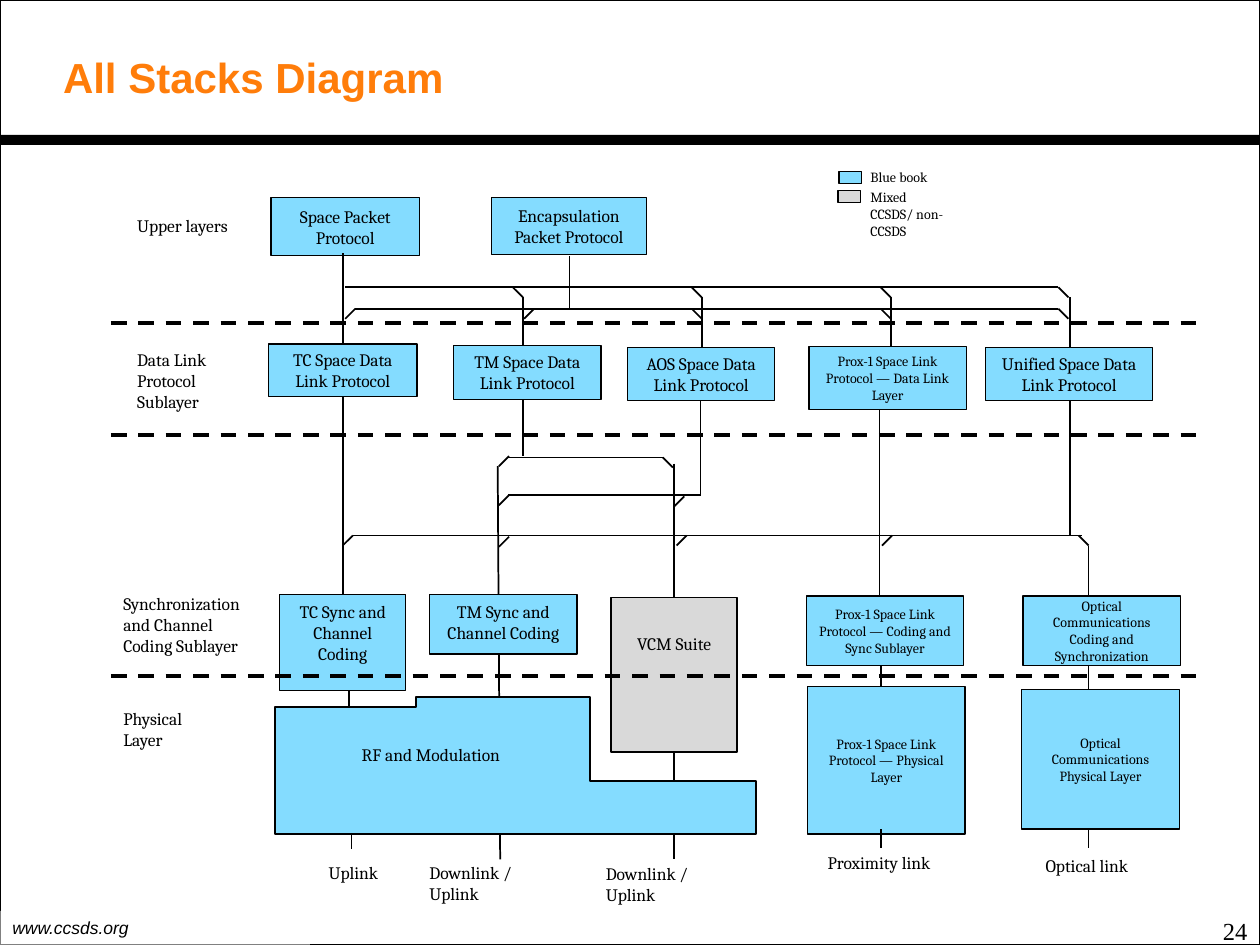
from dataclasses import dataclass
from typing import NamedTuple, Optional

from lxml.etree import SubElement
from pptx import Presentation
from pptx.dml.color import RGBColor
from pptx.enum.dml import MSO_LINE
from pptx.enum.shapes import MSO_CONNECTOR, MSO_SHAPE
from pptx.enum.text import MSO_ANCHOR as Anchor, MSO_AUTO_SIZE as AutoSize, PP_ALIGN as Align
from pptx.oxml.ns import qn
from pptx.util import Inches, Pt

BLACK = RGBColor(0x00, 0x00, 0x00)
WHITE = RGBColor(0xFF, 0xFF, 0xFF)
ORANGE = RGBColor(0xFF, 0x7D, 0x0A)
BLUE_BOOK = RGBColor(0x84, 0xDC, 0xFF)
MIXED = RGBColor(0xD9, 0xD9, 0xD9)

COLUMNS, ROWS = 1000, 750
WIDTH, HEIGHT = Inches(10), Inches(7.5)
TICK = 8


class Area(NamedTuple):
    col: float
    row: float
    cols: float
    rows: float


class Link(NamedTuple):
    col1: float
    row1: float
    col2: float
    row2: float


@dataclass
class Box:
    text: str
    area: Area
    size: float = 10
    fill: RGBColor = BLUE_BOOK
    anchor: Anchor = Anchor.MIDDLE
    lift: float = 0


@dataclass
class Label:
    text: str
    area: Area
    size: float = 10
    font: str = "Cambria"
    align: Align = Align.LEFT


BOXES = [
    Box("Space Packet Protocol", Area(215, 157, 118, 46)),
    Box("Encapsulation Packet Protocol", Area(390, 157, 123, 45)),
    Box("TC Space Data Link Protocol", Area(213, 273, 118, 42)),
    Box("TM Space Data Link Protocol", Area(360, 274, 117, 43)),
    Box("AOS Space Data Link Protocol", Area(498, 276, 117, 42)),
    Box("Prox-1 Space Link Protocol — Data Link Layer", Area(642, 275, 125, 50), 8),
    Box("Unified Space Data Link Protocol", Area(782, 276, 133, 42)),
    Box("TC Sync and Channel Coding", Area(222, 472, 100, 76), lift=16),
    Box("TM Sync and Channel Coding", Area(341, 472, 117, 47), anchor=Anchor.TOP),
    Box("VCM Suite", Area(485, 474, 100, 123), fill=MIXED, lift=49),
    Box("Prox-1 Space Link Protocol — Coding and Sync Sublayer", Area(640, 473, 125, 55), 8),
    Box("Optical Communications Coding and Synchronization", Area(812, 473, 125, 55), 8),
    Box("Prox-1 Space Link Protocol — Physical Layer", Area(641, 545, 125, 117), 8),
    Box("Optical Communications Physical Layer", Area(811, 547, 125, 111), 8),
    Box("", Area(666, 136, 18, 10)),
    Box("", Area(665, 151, 18, 10), fill=MIXED),
]
LABELS = [
    Label("Upper layers", Area(99, 166, 117, 27)),
    Label("Data Link Protocol Sublayer", Area(99, 272, 100, 61)),
    Label("Synchronization and Channel Coding Sublayer", Area(88, 466, 119, 61)),
    Label("Physical Layer", Area(88, 557, 92, 44)),
    Label("Blue book", Area(681, 129, 72, 24), 8),
    Label("Mixed CCSDS/ non-CCSDS", Area(681, 145, 80, 50), 8),
    Label("Uplink", Area(251, 679, 75, 27)),
    Label("Downlink / Uplink", Area(331, 679, 90, 44)),
    Label("Downlink / Uplink", Area(471, 680, 90, 44)),
    Label("Proximity link", Area(647, 671, 105, 27)),
    Label("Optical link", Area(820, 674, 100, 27)),
    Label("24", Area(767, 722, 233, 28), 14, "Times New Roman", Align.RIGHT),
]
RF_OUTLINE = [(218, 561), (330, 561), (330, 553), (468, 553), (468, 620),
              (600, 620), (600, 662), (218, 662)]

LINKS_BEHIND = [
    Link(395, 370, 397, 682), Link(535, 368, 535, 682),
    Link(864, 433, 864, 673), Link(415, 236, 415, 362),
]
BUSES = [
    Link(274, 228, 840, 228), Link(282, 245, 840, 245), Link(403, 363, 526, 363),
    Link(403, 393, 556, 393), Link(280, 425, 859, 425),
]
DROPS = [
    Link(272, 201, 272, 273), Link(452, 203, 452, 245), Link(557, 236, 557, 276),
    Link(707, 236, 707, 275), Link(849, 236, 849, 276), Link(272, 315, 272, 472),
    Link(556, 318, 556, 393), Link(698, 325, 698, 473), Link(849, 318, 849, 425),
    Link(699, 528, 699, 545), Link(277, 548, 277, 561), Link(279, 661, 279, 674),
    Link(699, 658, 699, 673),
]
FALLING_TICKS = [(407, 228), (549, 228), (699, 228), (840, 228), (549, 245),
                 (699, 245), (840, 245), (526, 363), (856, 425)]
RISING_TICKS = [(282, 245), (424, 245), (404, 362), (404, 393), (543, 394),
                (280, 425), (404, 426), (545, 425), (708, 425)]
LAYER_BORDERS = [Link(88, row, 956, row) for row in (256, 345, 536.5)]


def x(cols: float) -> int:
    return round(WIDTH * cols / COLUMNS)


def y(rows: float) -> int:
    return round(HEIGHT * rows / ROWS)


def place(area: Area) -> tuple:
    return x(area.col), y(area.row), x(area.cols), y(area.rows)


def write(frame, text: str, size: float, font: str = "Cambria",
          align: Align = Align.CENTER, color: RGBColor = BLACK):
    frame.word_wrap = True
    frame.auto_size = AutoSize.NONE
    paragraph = frame.paragraphs[0]
    paragraph.alignment = align
    run = paragraph.add_run()
    run.text = text
    run.font.size, run.font.name = Pt(size), font
    run.font.color.rgb = color
    return run


def paint(shape, fill: Optional[RGBColor], line: Optional[float]) -> None:
    shape.shadow.inherit = False
    if fill is None:
        shape.fill.background()
    else:
        shape.fill.solid()
        shape.fill.fore_color.rgb = fill
    if line is None:
        shape.line.fill.background()
    else:
        shape.line.color.rgb = BLACK
        shape.line.width = Pt(line)


def draw_rect(slide, area: Area, fill: Optional[RGBColor], line: Optional[float] = None):
    rect = slide.shapes.add_shape(MSO_SHAPE.RECTANGLE, *place(area))
    paint(rect, fill, line)
    return rect


def draw_box(slide, box: Box) -> None:
    frame = draw_rect(slide, box.area, box.fill, 0.75).text_frame
    if box.text:
        frame.vertical_anchor = box.anchor
        frame.margin_bottom = y(5 + box.lift)
        write(frame, box.text, box.size)


def draw_label(slide, label: Label) -> None:
    frame = slide.shapes.add_textbox(*place(label.area)).text_frame
    write(frame, label.text, label.size, label.font, label.align)


def draw_link(slide, link: Link, width: float = 1, dashed: bool = False) -> None:
    line = slide.shapes.add_connector(MSO_CONNECTOR.STRAIGHT, x(link.col1), y(link.row1),
                                      x(link.col2), y(link.row2))
    line.line.color.rgb = BLACK
    line.line.width = Pt(width)
    if dashed:
        line.line.dash_style = MSO_LINE.DASH
    SubElement(line._element.spPr, qn("a:effectLst"))


def draw_rf_modulation(slide) -> None:
    start, *corners = [(x(col), y(row)) for col, row in RF_OUTLINE]
    builder = slide.shapes.build_freeform(*start)
    builder.add_line_segments(corners, close=True)
    modulation = builder.convert_to_shape()
    paint(modulation, BLUE_BOOK, 1)
    frame = modulation.text_frame
    frame.vertical_anchor = Anchor.MIDDLE
    frame.margin_right, frame.margin_bottom = x(144), y(22)
    write(frame, "RF and Modulation", 10)


def draw_page(slide) -> None:
    draw_rect(slide, Area(0, 0, COLUMNS, ROWS), None, 1)
    footer = draw_rect(slide, Area(0, 723, 246, 27), WHITE)
    alpha = SubElement(footer._element.spPr.find(".//" + qn("a:srgbClr")), qn("a:alpha"))
    alpha.set("val", "50000")
    footer.text_frame.vertical_anchor = Anchor.MIDDLE
    write(footer.text_frame, "www.ccsds.org", 10, "Arial", Align.LEFT).font.italic = True
    draw_rect(slide, Area(0, 107, COLUMNS, 8), BLACK)
    title = slide.shapes.title
    title.left, title.top, title.width, title.height = place(Area(40, 27, 681, 67))
    title.text_frame.vertical_anchor = Anchor.MIDDLE
    write(title.text_frame, "All Stacks Diagram", 24, "Arial", Align.LEFT, ORANGE).font.bold = True


def main() -> None:
    deck = Presentation()
    deck.slide_width, deck.slide_height = WIDTH, HEIGHT
    slide = deck.slides.add_slide(deck.slide_layouts[5])
    draw_page(slide)
    for link in LINKS_BEHIND:
        draw_link(slide, link)
    for box in BOXES:
        draw_box(slide, box)
    draw_rf_modulation(slide)
    falling = [Link(col, row, col + TICK, row + TICK) for col, row in FALLING_TICKS]
    rising = [Link(col, row, col - TICK, row + TICK) for col, row in RISING_TICKS]
    for link in BUSES + DROPS + falling + rising:
        draw_link(slide, link)
    for border in LAYER_BORDERS:
        draw_link(slide, border, 2.25, dashed=True)
    for label in LABELS:
        draw_label(slide, label)
    deck.save("out.pptx")


if __name__ == "__main__":
    main()
